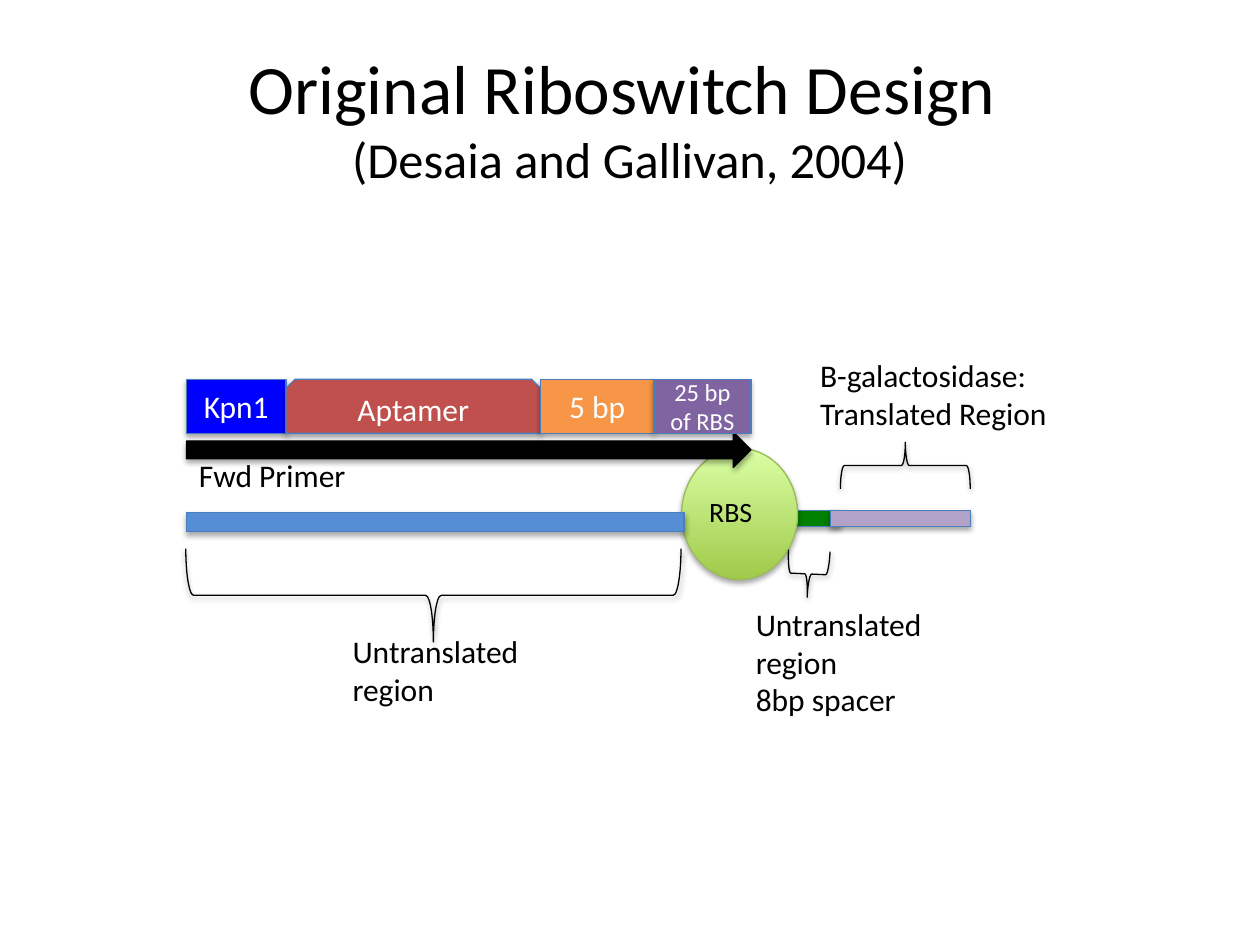
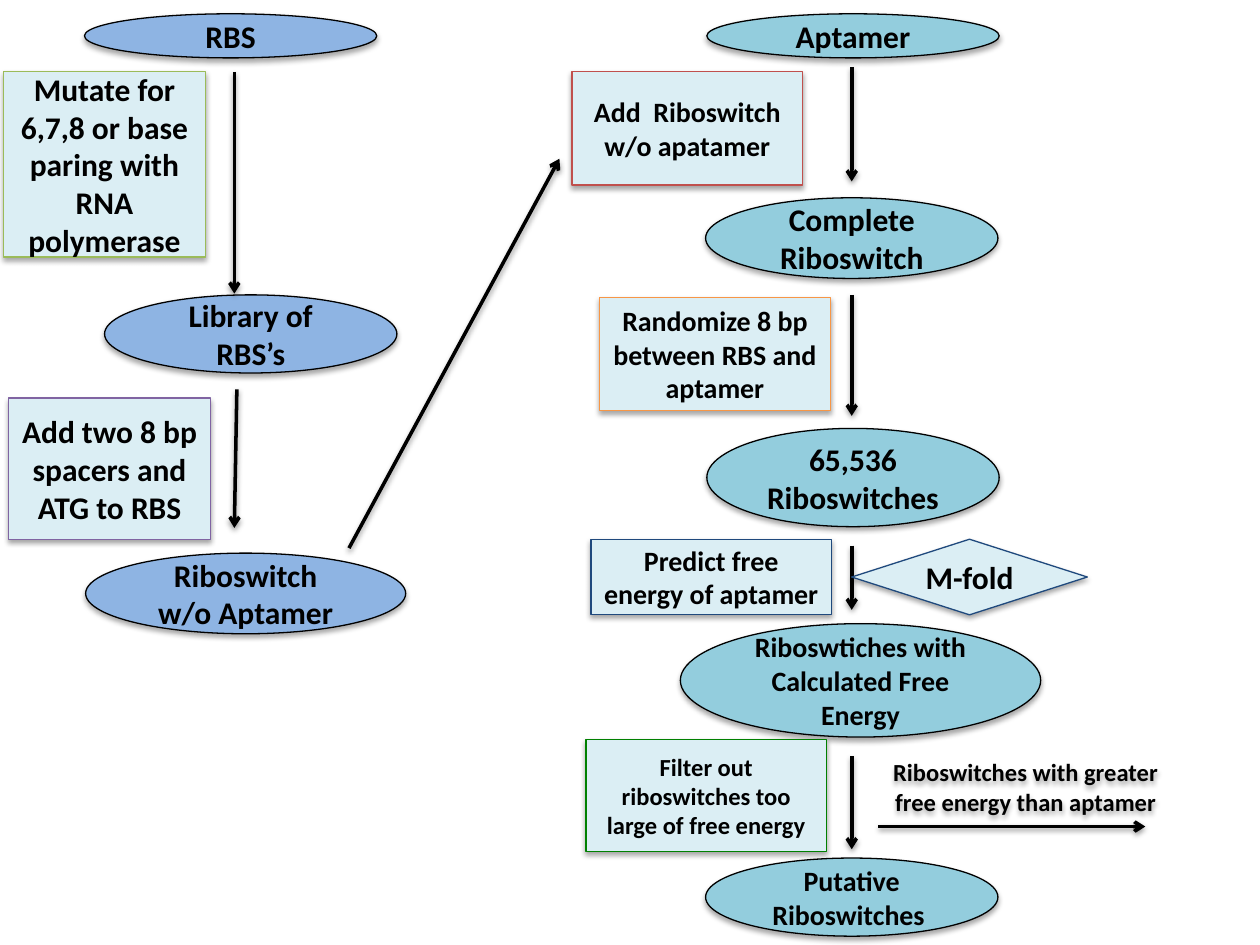
import pptx
import pptx.util
from lxml import etree
from pptx.dml.color import RGBColor
from pptx.enum.shapes import MSO_CONNECTOR, MSO_SHAPE
from pptx.enum.text import MSO_ANCHOR, MSO_AUTO_SIZE, PP_ALIGN
from pptx.oxml.ns import qn

PX = 9144  # EMU in one px, 100 px to the inch
FONT = "Calibri"

BLACK = RGBColor(0x00, 0x00, 0x00)
WHITE = RGBColor(0xFF, 0xFF, 0xFF)
EDGE = RGBColor(0x4B, 0x7E, 0xBC)
BLUE = RGBColor(0x00, 0x00, 0xFF)
RED = RGBColor(0xC0, 0x50, 0x4D)
ORANGE = RGBColor(0xF7, 0x96, 0x46)
PURPLE = RGBColor(0x80, 0x64, 0xA2)
LILAC = RGBColor(0xB3, 0xA2, 0xC7)
GREEN = RGBColor(0x00, 0x80, 0x00)
OLIVE = RGBColor(0x9B, 0xBB, 0x59)
NAVY = RGBColor(0x1F, 0x49, 0x7D)
MID_BLUE = RGBColor(0x55, 0x8E, 0xD5)
LEAF = RGBColor(0xA0, 0xCA, 0x4A)
LIME = RGBColor(0xDA, 0xFF, 0xA5)
SKY = RGBColor(0x8E, 0xB4, 0xE3)
TEAL = RGBColor(0x93, 0xCD, 0xDD)
ICE = RGBColor(0xDB, 0xEE, 0xF4)


class Deck:
    def __init__(self):
        self.prs = pptx.Presentation()
        self.prs.slide_width = 1000 * PX
        self.prs.slide_height = 750 * PX
        self.s = None

    def new_slide(self):
        self.s = self.prs.slides.add_slide(self.prs.slide_layouts[6])

    def shadow(self, sp, alpha=35, dist=1.8):
        """Drop a soft black shadow straight down."""
        spPr = sp.element.spPr
        effects = spPr.find(qn("a:effectLst"))
        if effects is None:
            effects = etree.SubElement(spPr, qn("a:effectLst"))
        shade = etree.SubElement(
            effects, qn("a:outerShdw"), blurRad=str(int(pptx.util.Pt(3.1))),
            dist=str(int(pptx.util.Pt(dist))), dir="5400000", rotWithShape="0")
        color = etree.SubElement(shade, qn("a:srgbClr"), val=str(BLACK))
        etree.SubElement(color, qn("a:alpha"), val=str(alpha * 1000))

    def set_text(self, sp, text, sizes, color=BLACK, bold=False, centred=True):
        """Fill a shape with text; sizes holds one size for each run."""
        tf = sp.text_frame
        tf.text = text
        tf.word_wrap = True
        tf.vertical_anchor = MSO_ANCHOR.MIDDLE if centred else MSO_ANCHOR.TOP
        for p in tf.paragraphs:
            p.alignment = PP_ALIGN.CENTER if centred else PP_ALIGN.LEFT
            for r, size in zip(p.runs, sizes):
                r.font.name = FONT
                r.font.size = pptx.util.Pt(size)
                r.font.bold = bold
                r.font.color.rgb = color

    def shape(self, kind, x, y, w, h, fill, line=EDGE, text="", size=18,
              color=BLACK, bold=False):
        """Add a preset shape; a pair of fills is a gradient, None is no fill."""
        sp = self.s.shapes.add_shape(kind, x * PX, y * PX, w * PX, h * PX)
        sp.shadow.inherit = False
        if fill is None:
            self.shadow(sp, 38, 1.6)
            sp.fill.background()
        elif isinstance(fill, tuple) and not isinstance(fill, RGBColor):
            self.shadow(sp)
            sp.fill.gradient()
            sp.fill.gradient_angle = 90
            for stop, rgb, position in zip(sp.fill.gradient_stops, fill, (0, 1)):
                stop.color.rgb = rgb
                stop.position = position
        else:
            self.shadow(sp)
            sp.fill.solid()
            sp.fill.fore_color.rgb = fill
        sp.line.color.rgb = line
        sp.line.width = pptx.util.Pt(0.75)
        if text:
            self.set_text(sp, text, [size], color, bold)
        return sp

    def brace(self, x, y, w, h, rotation):
        sp = self.shape(MSO_SHAPE.LEFT_BRACE, x, y, w, h, None, BLACK)
        sp.rotation = rotation

    def text_box(self, x, y, w, h, text, *sizes, bold=False, centred=False):
        sp = self.s.shapes.add_textbox(x * PX, y * PX, w * PX, h * PX)
        self.set_text(sp, text, sizes, bold=bold, centred=centred)
        return sp

    def label(self, x, y, w, h, text, size=18, wrap=True):
        """Left-aligned caption whose box grows with its text."""
        tf = self.text_box(x, y, w, h, text, size).text_frame
        tf.auto_size = MSO_AUTO_SIZE.SHAPE_TO_FIT_TEXT
        tf.word_wrap = wrap

    def arrow(self, x1, y1, x2, y2):
        cx = self.s.shapes.add_connector(
            MSO_CONNECTOR.STRAIGHT, x1 * PX, y1 * PX, x2 * PX, y2 * PX)
        cx.line.color.rgb = BLACK
        cx.line.width = pptx.util.Pt(2)
        ln = cx.element.spPr.find(qn("a:ln"))
        etree.SubElement(ln, qn("a:tailEnd"), type="arrow")
        self.shadow(cx, 38, 1.6)


def design_slide(deck):
    deck.new_slide()
    rect = MSO_SHAPE.RECTANGLE
    deck.shape(rect, 616, 405, 51, 13, GREEN)
    deck.shape(rect, 659, 405, 111, 13, LILAC)
    deck.shape(MSO_SHAPE.OVAL, 541, 356, 92, 104, (LEAF, LIME), OLIVE)
    deck.label(553, 388, 91, 37, "RBS", 16)
    deck.shape(MSO_SHAPE.RIGHT_ARROW, 148, 343, 448, 28, BLACK, BLACK)
    deck.label(148, 357, 138, 40, "Fwd Primer", wrap=False)

    x = 148
    for kind, width, fill, text, size in (
            (rect, 79, BLUE, "Kpn1", 18),
            (MSO_SHAPE.SNIP_2_SAME_RECTANGLE, 202, RED, "Aptamer", 18),
            (rect, 90, ORANGE, "5 bp", 18),
            (rect, 77, PURPLE, "25 bp of RBS", 14)):
        deck.shape(kind, x, 301, width, 43, fill, text=text, size=size, color=WHITE)
        x += width

    deck.brace(700, 318, 37, 103, 90)
    deck.label(641, 278, 229, 71, "B-galactosidase: Translated Region")
    deck.brace(623, 439, 37, 33, 272.6)
    deck.label(590, 475, 180, 101, "Untranslated region\n8bp spacer")
    deck.text_box(50, 30, 900, 125,
                  "Original Riboswitch Design \v(Desaia and Gallivan, 2004)",
                  39.6, 28.8, centred=True)
    deck.shape(rect, 148, 407, 395, 15, MID_BLUE)
    deck.brace(307, 276, 74, 393, 270)
    deck.label(270, 497, 180, 71, "Untranslated region")


def workflow_slide(deck):
    deck.new_slide()
    for x, y, w, h, fill, text, size in (
            (561, 11, 232, 35, TEAL, "Aptamer", 18),
            (560, 157, 232, 64, TEAL, "Complete Riboswitch", 18),
            (561, 340, 232, 78, TEAL, "65,536 Riboswitches", 18),
            (540, 495, 286, 90, TEAL, "Riboswtiches with Calculated Free Energy", 16),
            (560, 681, 232, 62, TEAL, "Putative Riboswitches ", 16),
            (67, 11, 232, 35, SKY, "RBS", 18),
            (83, 234, 232, 62, SKY, "Library of RBS’s", 18),
            (68, 439, 254, 64, SKY, "Riboswitch w/o Aptamer", 18)):
        deck.shape(MSO_SHAPE.OVAL, x, y, w, h, fill, BLACK, text, size, bold=True)

    for top, bottom in ((53, 144), (234, 330), (433, 484), (600, 674)):
        deck.arrow(676, top, 676, bottom)
    deck.arrow(186, 57, 186, 233)
    deck.arrow(188, 309, 186, 419)
    deck.arrow(277, 435, 444, 126)
    deck.arrow(697, 656, 909, 656)

    for x, y, w, h, line, text, size in (
            (3, 57, 160, 147, OLIVE,
             "Mutate for 6,7,8 or base paring with RNA polymerase", 18),
            (7, 316, 160, 112, PURPLE, "Add two 8 bp spacers and ATG to RBS", 18),
            (454, 57, 183, 90, RED, "Add  Riboswitch w/o apatamer", 16),
            (476, 236, 183, 90, ORANGE, "Randomize 8 bp between RBS and aptamer", 16),
            (469, 428, 191, 60, NAVY, "Predict free energy of aptamer", 16),
            (465, 587, 191, 89, GREEN,
             "Filter out riboswitches too large of free energy", 14)):
        deck.shape(MSO_SHAPE.RECTANGLE, x, y, w, h, ICE, line, text, size, bold=True)

    deck.shape(MSO_SHAPE.DIAMOND, 676, 428, 187, 60, ICE, NAVY, "M-fold", bold=True)
    rejected = deck.text_box(698, 598, 232, 53,
                             "Riboswitches with greater free energy than aptamer",
                             14, bold=True, centred=True)
    deck.shadow(rejected)


def main():
    deck = Deck()
    design_slide(deck)
    workflow_slide(deck)
    deck.prs.save("out.pptx")


if __name__ == "__main__":
    main()
